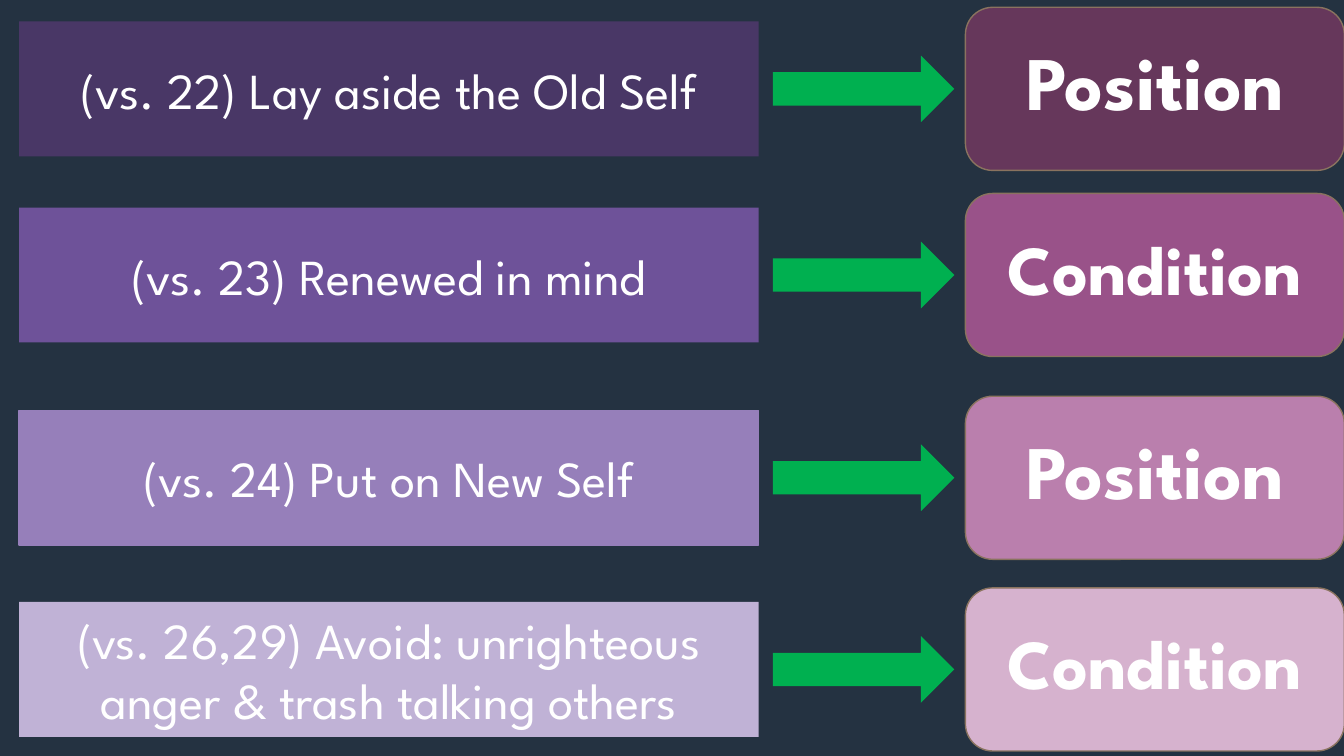
from pptx import Presentation
from pptx.dml.color import RGBColor
from pptx.enum.shapes import MSO_SHAPE
from pptx.enum.text import MSO_ANCHOR, PP_ALIGN
from pptx.util import Cm, Pt

RECT = MSO_SHAPE.RECTANGLE
ROUND = MSO_SHAPE.ROUNDED_RECTANGLE
ARROW = MSO_SHAPE.RIGHT_ARROW
MIDDLE = MSO_ANCHOR.MIDDLE
CENTER = PP_ALIGN.CENTER

COLORS = {
    "back": "243241", "white": "FFFFFF", "green": "00B050", "edge": "8A735F",
    "bar1": "493766", "bar2": "6E5299", "bar3": "967FBA", "bar4": "C0B2D6",
    "card1": "66375B", "card2": "995289", "card3": "BA7FAD", "card4": "D6B2CE",
}
SIZES = {"Position": 54, "Condition": 50}
LEFT, WIDE, HIGH = 0.48, 33.4, 4.11
ROWS = [
    (2.24, "(vs. 22) Lay aside the Old Self", "Position", None),
    (6.93, "(vs. 23) Renewed in mind", "Condition", None),
    (12.04, "(vs. 24) Put on New Self", "Position", "bar3"),
    (16.87, "(vs. 26,29) Avoid: unrighteous anger & trash talking others",
     "Condition", None),
]


def color(name):
    """Return the named colour."""
    return RGBColor.from_string(COLORS[name])


def add_block(slide, kind, box, fill, edge=None):
    """Add a flat shape in a box of centimetres."""
    block = slide.shapes.add_shape(kind, *map(Cm, box))
    block.shadow.inherit = False
    block.fill.solid()
    block.fill.fore_color.rgb = color(fill)
    if edge:
        block.line.color.rgb = color(edge)
        block.line.width = Pt(1)
    else:
        block.line.fill.background()
    return block


def add_label(block, text, form, space=None):
    """Write centred text in a block."""
    frame = block.text_frame
    frame.word_wrap = True
    frame.vertical_anchor = MIDDLE
    line = frame.paragraphs[0]
    line.alignment = CENTER
    line.line_spacing = space
    run = line.add_run()
    run.text = text
    run.font.color.rgb = color("white")
    for key, value in form.items():
        setattr(run.font, key, value)


def add_row(slide, box, num, verse, state, edge):
    """Place a verse bar, an arrow and a state card in the given box."""
    left, top, wide, high = box
    mid = top + high / 2
    bar_w, bar_h = 18.64, 3.4
    arrow_w, arrow_h = 4.57, 1.68
    card_w = 9.55
    bar = add_block(slide, RECT, (left, mid - bar_h / 2, bar_w, bar_h),
                    f"bar{num}", edge)
    add_label(bar, verse, {"name": "League Spartan", "size": Pt(36), "bold": False})
    add_block(slide, ARROW,
              (left + bar_w + 0.36, mid - arrow_h / 2, arrow_w, arrow_h), "green")
    card = add_block(slide, ROUND, (left + wide - card_w, top, card_w, high),
                     f"card{num}", "edge")
    add_label(card, state,
              {"name": "League Spartan", "size": Pt(SIZES[state]), "bold": True}, 0.8)


def main():
    """Build and save the slide."""
    deck = Presentation()
    deck.slide_width, deck.slide_height = Cm(33.87), Cm(19.05)
    slide = deck.slides.add_slide(deck.slide_layouts[6])
    slide.background.fill.solid()
    slide.background.fill.fore_color.rgb = color("back")
    for num, (mid, verse, state, edge) in enumerate(ROWS, 1):
        box = (LEFT, mid - HIGH / 2, WIDE, HIGH)
        add_row(slide, box, num, verse, state, edge)
    deck.save("out.pptx")


if __name__ == "__main__":
    main()
